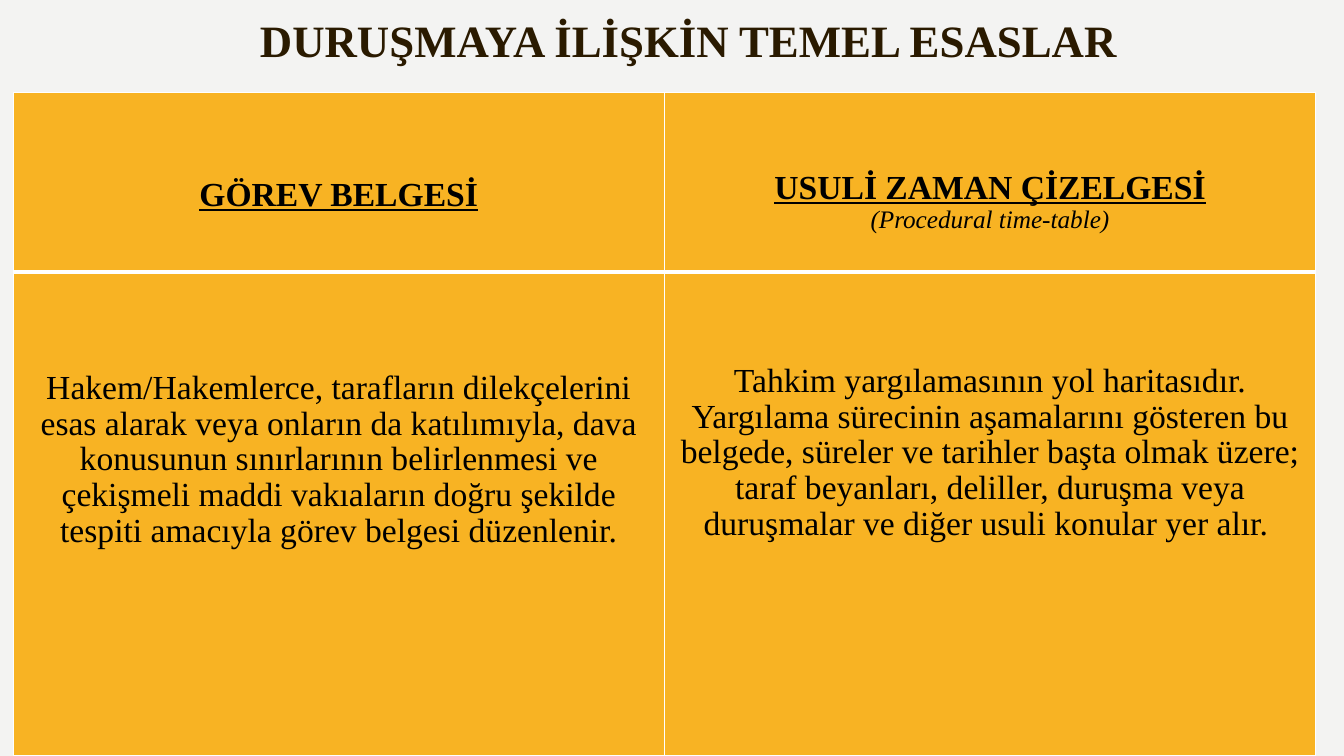
from lxml.etree import SubElement
from pptx import Presentation
from pptx.dml.color import RGBColor
from pptx.enum.text import MSO_ANCHOR, PP_ALIGN
from pptx.oxml.ns import qn
from pptx.util import Inches, Pt

BACKGROUND = RGBColor(0xF3, 0xF3, 0xF2)
BROWN = RGBColor(0x2A, 0x1A, 0x00)
AMBER = RGBColor(0xF8, 0xB3, 0x23)
BLACK = RGBColor(0x00, 0x00, 0x00)
WHITE = RGBColor(0xFF, 0xFF, 0xFF)


def write(para, text, size=24, color=BLACK, bold=False, italic=False,
          underline=False, spacing=1.0):
    para.alignment = PP_ALIGN.CENTER
    para.line_spacing = spacing
    span = para.add_run()
    span.text = text
    span.font.name = "Times New Roman"
    span.font.size = Pt(size)
    span.font.color.rgb = color
    span.font.bold = bold
    span.font.italic = italic
    span.font.underline = underline


def set_borders(cell, bottom):
    properties = cell._tc.get_or_add_tcPr()
    widths = {"a:lnL": 1, "a:lnR": 1, "a:lnT": 1, "a:lnB": bottom}
    for position, (tag, width) in enumerate(widths.items()):
        line = SubElement(properties, qn(tag), w=str(Pt(width)))
        fill = SubElement(line, qn("a:solidFill"))
        SubElement(fill, qn("a:srgbClr"), val=str(WHITE))
        properties.insert(position, line)


deck = Presentation()
deck.slide_width = Inches(13.33)
deck.slide_height = Inches(7.5)
page = deck.slides.add_slide(deck.slide_layouts[6])
page.background.fill.solid()
page.background.fill.fore_color.rgb = BACKGROUND

# Title
box = page.shapes.add_textbox(Inches(1.16), Inches(0.12), Inches(11.34), Inches(0.55))
frame = box.text_frame
frame.word_wrap = True
frame.vertical_anchor = MSO_ANCHOR.MIDDLE
frame.margin_left = frame.margin_right = frame.margin_top = frame.margin_bottom = 0
write(frame.paragraphs[0], "DURUŞMAYA İLİŞKİN TEMEL ESASLAR",
      size=32, color=BROWN, bold=True)

# Table of the two documents
documents = [
    ("GÖREV BELGESİ", None, 0.83,
     "Hakem/Hakemlerce, tarafların dilekçelerini esas alarak veya onların da "
     "katılımıyla, dava konusunun sınırlarının belirlenmesi ve çekişmeli maddi "
     "vakıaların doğru şekilde tespiti amacıyla görev belgesi düzenlenir.", 0.98),
    ("USULİ ZAMAN ÇİZELGESİ", "(Procedural time-table)", 0.76,
     "Tahkim yargılamasının yol haritasıdır. Yargılama sürecinin aşamalarını "
     "gösteren bu belgede, süreler ve tarihler başta olmak üzere; taraf beyanları, "
     "deliller, duruşma veya duruşmalar ve diğer usuli konular yer alır. ", 0.91),
]
table = page.shapes.add_table(2, len(documents), Inches(0.13), Inches(0.92),
                              Inches(12.92), Inches(6.58)).table
table.rows[0].height = Inches(1.78)
table.rows[1].height = Inches(4.8)

for column, (heading, subtitle, heading_top, body, body_top) in enumerate(documents):
    table.columns[column].width = Inches(6.46)
    header_cell, body_cell = table.cell(0, column), table.cell(1, column)
    for cell, top, bottom in ((header_cell, heading_top, 3), (body_cell, body_top, 1)):
        cell.fill.solid()
        cell.fill.fore_color.rgb = AMBER
        cell.margin_top = Inches(top)
        set_borders(cell, bottom)

    write(header_cell.text_frame.paragraphs[0], heading, bold=True, underline=True)
    if subtitle:
        write(header_cell.text_frame.add_paragraph(), subtitle, size=18, italic=True)
    write(body_cell.text_frame.paragraphs[0], body, spacing=0.96)

deck.save("out.pptx")
